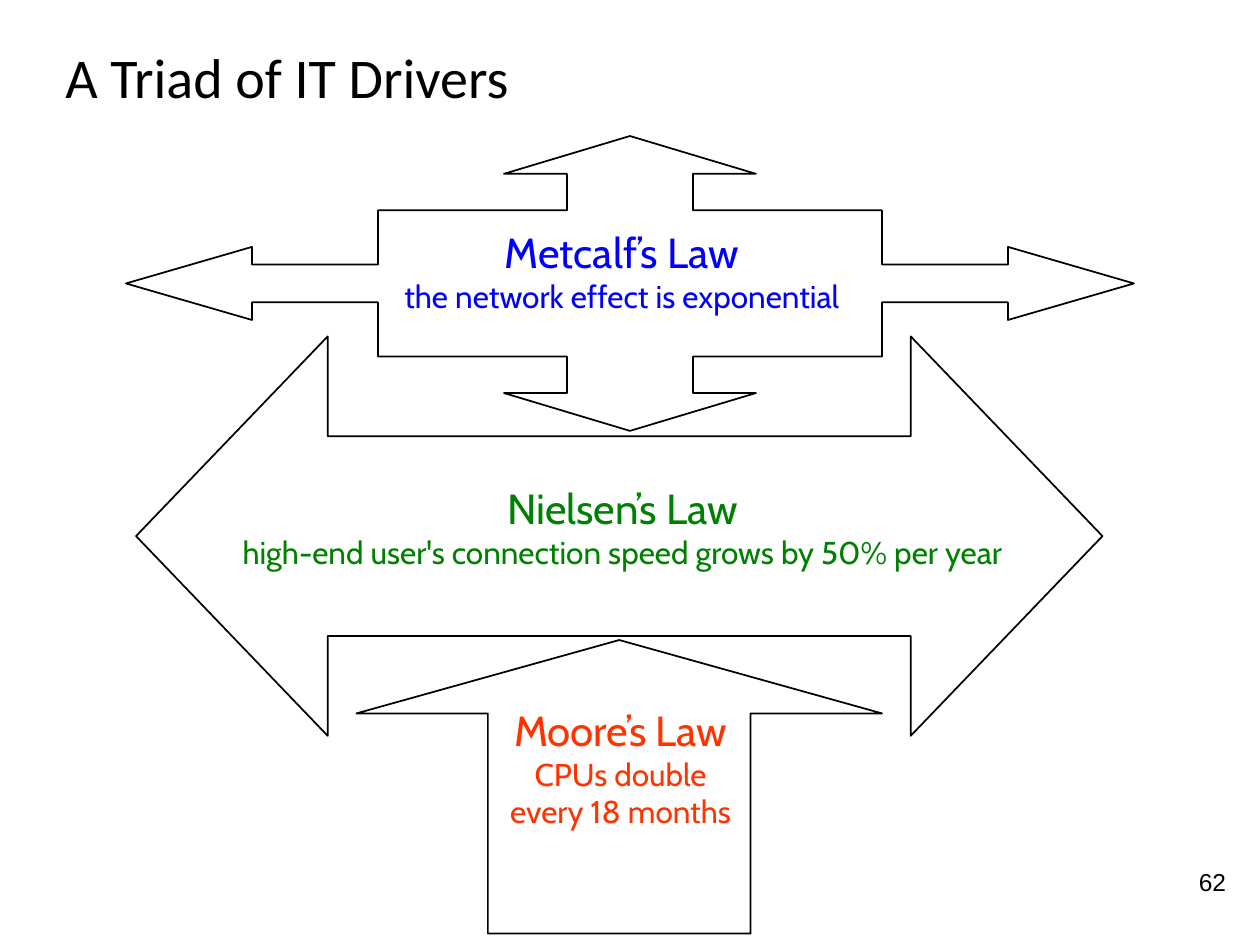
from dataclasses import dataclass

from pptx import Presentation
from pptx import util as u
from pptx.dml.color import RGBColor
from pptx.enum import shapes, text

BLACK = RGBColor(0x00, 0x00, 0x00)
RED = RGBColor(0xFF, 0x33, 0x00)
GREEN = RGBColor(0x00, 0x80, 0x00)
BLUE = RGBColor(0x00, 0x00, 0xFF)


@dataclass
class Frame:
    left: float
    top: float
    width: float
    height: float

    def lengths(self) -> list:
        return [u.Inches(v) for v in (self.left, self.top, self.width, self.height)]


@dataclass
class Law:
    name: str
    details: list[str]
    color: RGBColor
    frame: Frame


MOORE = Law("Moore’s Law", ["CPUs double", "every 18 months"], RED,
            Frame(3.88, 5.54, 2.09, 1.1))
NIELSEN = Law("Nielsen’s Law",
              ["high-end user's connection speed grows by 50% per year"], GREEN,
              Frame(1.67, 3.78, 6.54, 0.8))
METCALF = Law("Metcalf’s Law", ["the network effect is exponential"], BLUE,
              Frame(3.05, 1.75, 3.77, 0.8))

# Upper tip to right tip of the four-way arrow, as distances from its centre
QUARTER = [(0, 1.17), (1, 0.87), (0.5, 0.87), (0.5, 0.58), (2, 0.58),
           (2, 0.15), (3, 0.15), (3, 0.29), (4, 0)]


def add_text(page, frame: Frame, lines: list[tuple[str, int]], *, font: str,
             color: RGBColor, align=text.PP_ALIGN.LEFT,
             anchor=text.MSO_ANCHOR.TOP, wrap: bool = True) -> None:
    """Add a text box with one paragraph for each (words, size) pair."""
    box = page.shapes.add_textbox(*frame.lengths()).text_frame
    box.word_wrap = wrap
    box.vertical_anchor = anchor
    for index, (words, size) in enumerate(lines):
        para = box.add_paragraph() if index else box.paragraphs[0]
        para.alignment = align
        span = para.add_run()
        span.text = words
        span.font.name = font
        span.font.size = u.Pt(size)
        span.font.color.rgb = color


def add_law(page, law: Law) -> None:
    lines = [(law.name, 24)] + [(detail, 18) for detail in law.details]
    add_text(page, law.frame, lines, font="Cabin", color=law.color,
             align=text.PP_ALIGN.CENTER, wrap=False)


def outline(shape) -> None:
    shape.shadow.inherit = False
    shape.fill.background()
    shape.line.color.rgb = BLACK
    shape.line.width = u.Pt(1)


def add_arrow(page, kind, frame: Frame, adjustments: list[float]) -> None:
    arrow = page.shapes.add_shape(kind, *frame.lengths())
    for index, value in enumerate(adjustments):
        arrow.adjustments[index] = value
    outline(arrow)


def add_four_way_arrow(page, center_x: float, center_y: float) -> None:
    """Mirror the quarter outline clockwise into all four quadrants."""
    points = []
    for sign_x, sign_y, step in ((1, -1, 1), (1, 1, -1), (-1, 1, 1), (-1, -1, -1)):
        points += [(u.Inches(center_x + sign_x * dx), u.Inches(center_y + sign_y * dy))
                   for dx, dy in QUARTER[::step][:-1]]
    builder = page.shapes.build_freeform(*points[0])
    builder.add_line_segments(points[1:], close=True)
    outline(builder.convert_to_shape())


def main() -> None:
    deck = Presentation()
    deck.slide_width, deck.slide_height = u.Inches(10), u.Inches(7.5)
    page = deck.slides.add_slide(deck.slide_layouts[6])

    # Title
    add_text(page, Frame(0.42, 0, 9.33, 0.92), [("A Triad of IT Drivers", 32)],
             font="Calibri", color=BLACK, anchor=text.MSO_ANCHOR.BOTTOM)

    # Three drivers, from the bottom up
    add_arrow(page, shapes.MSO_SHAPE.UP_ARROW, Frame(2.83, 5.08, 4.17, 2.33),
              [0.5, 0.25])
    add_law(page, MOORE)
    add_arrow(page, shapes.MSO_SHAPE.LEFT_RIGHT_ARROW,
              Frame(1.08, 2.67, 7.67, 3.17), [0.5, 0.48])
    add_law(page, NIELSEN)
    add_four_way_arrow(page, 5, 2.25)
    add_law(page, METCALF)

    # Page number
    add_text(page, Frame(8.5, 6.83, 1.33, 0.52), [("62", 14)], font="Arial",
             color=BLACK, align=text.PP_ALIGN.RIGHT)

    deck.save("out.pptx")


if __name__ == "__main__":
    main()
